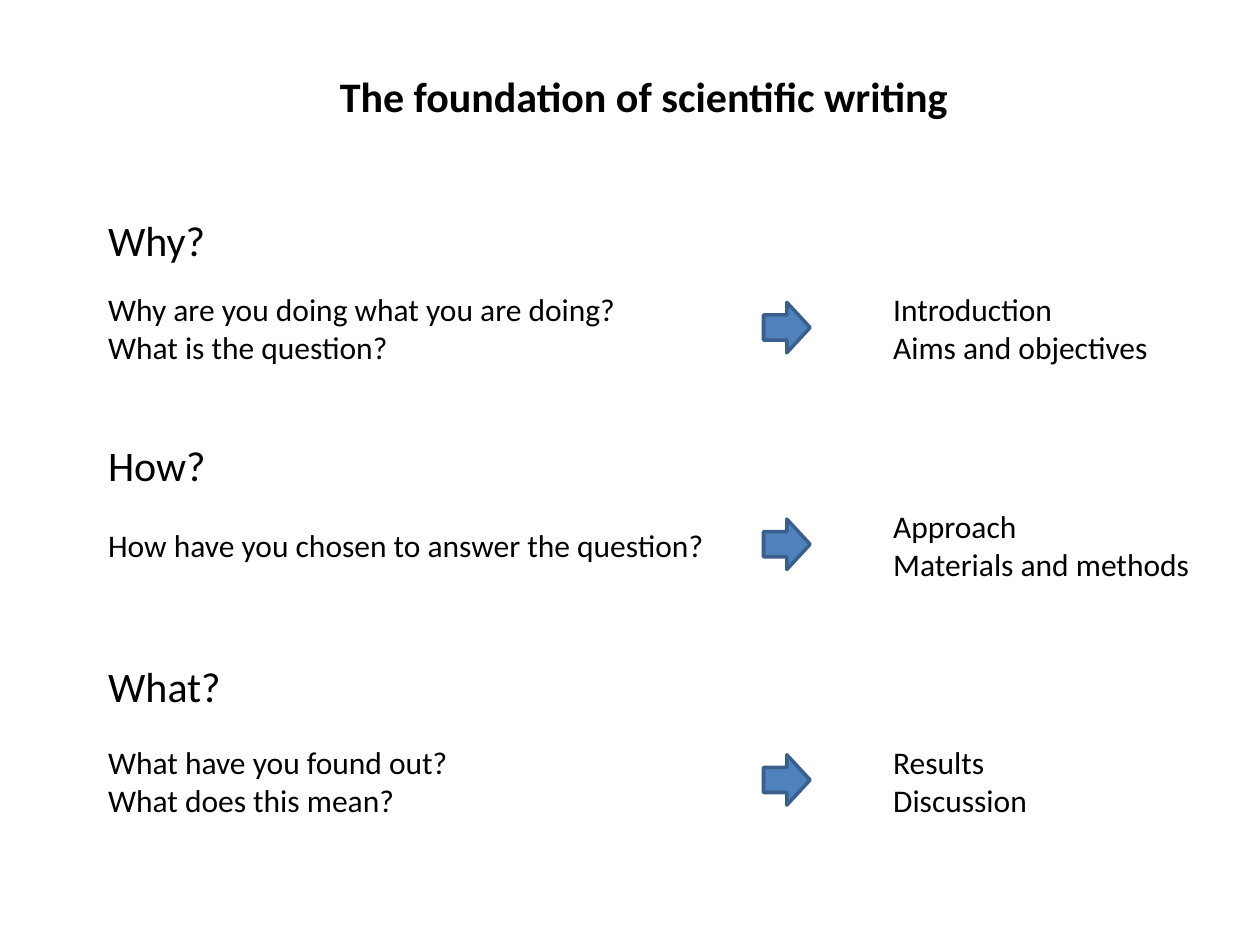
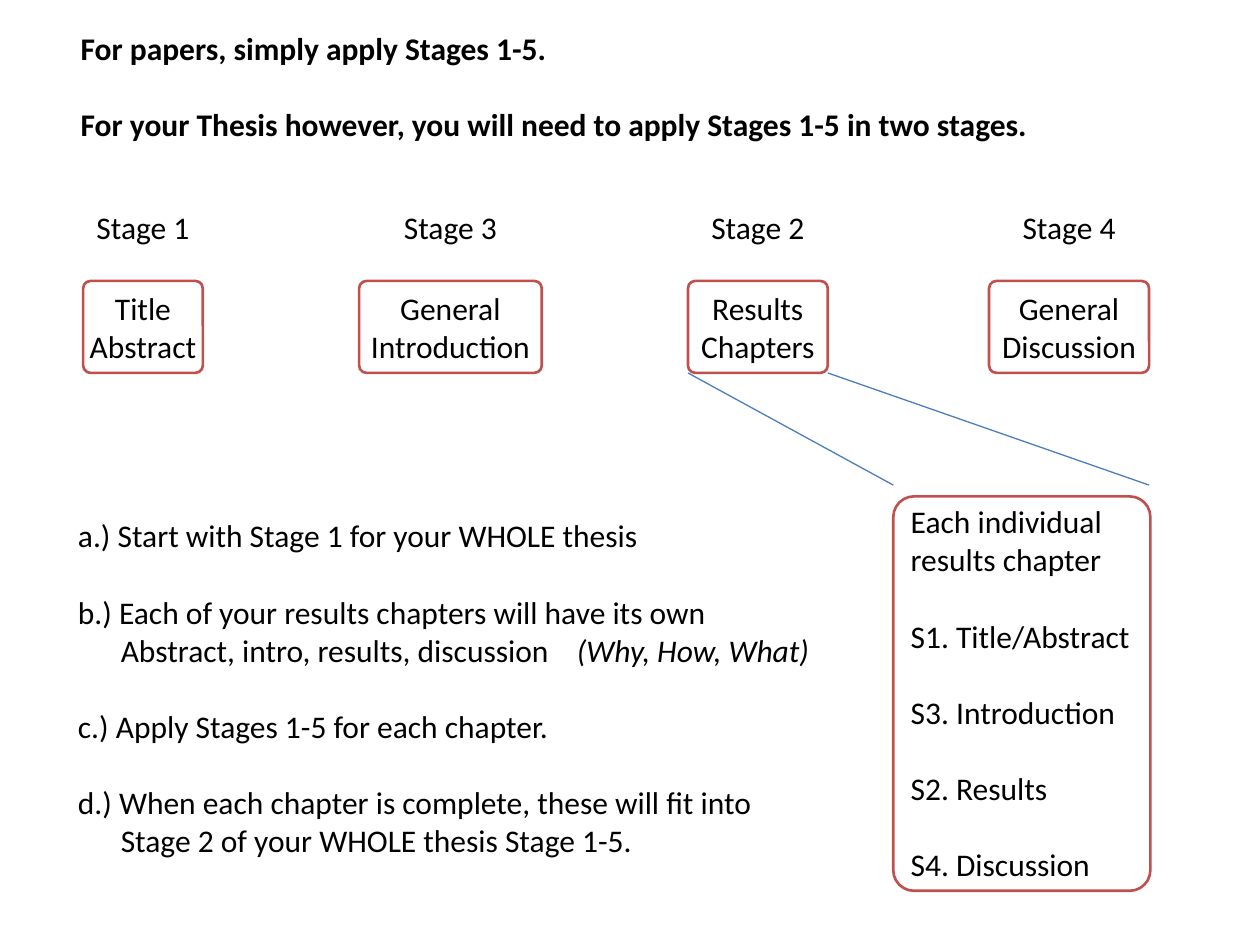
from lxml import etree
from pptx import Presentation
from pptx import util as u
from pptx.dml.color import RGBColor
from pptx.enum import shapes, text
from pptx.oxml import ns

INK, RED, BLUE, BLUE_EDGE, BLUE_LINE = "000000", "C0504D", "4F81BD", "3A5F8C", "4B7EBC"
LEFT, CENTER = text.PP_ALIGN.LEFT, text.PP_ALIGN.CENTER
TOP, MIDDLE = text.MSO_ANCHOR.TOP, text.MSO_ANCHOR.MIDDLE
BODY, HEADING, LINE_GAP = 18, 24, 22
TITLE_ONLY = 5


def color(value):
    return RGBColor.from_string(value)


class Slides:
    """Holds the shared style and the slide being drawn."""

    font = "Calibri"

    def __init__(self):
        self.deck = Presentation()
        self.deck.slide_width, self.deck.slide_height = u.Inches(10), u.Inches(7.5)
        self.page = None

    def add_page(self, lines, place, size, align=LEFT):
        self.page = self.deck.slides.add_slide(self.deck.slide_layouts[TITLE_ONLY])
        title = self.page.shapes.title
        title.left, title.top, title.width, title.height = map(u.Inches, place)
        self.fill_text(title.text_frame, lines, size, align, gap=LINE_GAP, bold=True)

    def fill_text(self, frame, lines, size=BODY, align=LEFT, anchor=TOP,
                  gap=0, bold=False, insets=(0.1, 0.05), tabs=()):
        frame.word_wrap = True
        frame.auto_size = text.MSO_AUTO_SIZE.NONE
        frame.vertical_anchor = anchor
        frame.margin_left = frame.margin_right = u.Inches(insets[0])
        frame.margin_top = frame.margin_bottom = u.Inches(insets[1])
        for index, line in enumerate(lines):
            para = frame.add_paragraph() if index else frame.paragraphs[0]
            para.text = line
            para.alignment = align
            para.space_before = u.Pt(gap if index else 0)
            self.set_tabs(para, tabs)
            para.font.name, para.font.size, para.font.bold = self.font, u.Pt(size), bold
            para.font.color.rgb = color(INK)
        return frame

    def set_tabs(self, para, stops):
        if stops:
            tab_list = etree.SubElement(para._p.get_or_add_pPr(), ns.qn("a:tabLst"))
            for stop in stops:
                etree.SubElement(tab_list, ns.qn("a:tab"), pos=str(u.Inches(stop)), algn="l")

    def label(self, lines, place, **style):
        box = self.page.shapes.add_textbox(*map(u.Inches, place))
        return self.fill_text(box.text_frame, lines, **style)

    def shape(self, kind, place, edge, width, fill=None):
        item = self.page.shapes.add_shape(kind, *map(u.Inches, place))
        item.shadow.inherit = False
        if fill:
            item.fill.solid()
            item.fill.fore_color.rgb = color(fill)
        else:
            item.fill.background()
        item.line.color.rgb, item.line.width = color(edge), u.Pt(width)
        return item

    def frame(self, lines, place, **style):
        box = self.shape(shapes.MSO_SHAPE.ROUNDED_RECTANGLE, place, RED, 1.5)
        box.adjustments[0] = 0.08
        self.fill_text(box.text_frame, lines, **style)

    def arrow(self, place):
        self.shape(shapes.MSO_SHAPE.RIGHT_ARROW, place, BLUE_EDGE, 2, BLUE)

    def line(self, start, end):
        connector = self.page.shapes.add_connector(
            shapes.MSO_CONNECTOR.STRAIGHT, *map(u.Inches, start + end))
        connector.line.color.rgb, connector.line.width = color(BLUE_LINE), u.Pt(0.75)
        etree.SubElement(connector._element.spPr, ns.qn("a:effectLst"))


def draw_foundation(slides):
    slides.add_page(["The foundation of scientific writing"], (2.57, 0.51, 5.08, 0.51),
                    HEADING, CENTER)
    rows = [
        (1.65, 2.25, "Why?", ["Why are you doing what you are doing?", "What is the question?"],
         ["Introduction", "Aims and objectives"]),
        (3.44, 3.97, "How?", ["How have you chosen to answer the question?"],
         ["Approach", "Materials and methods"]),
        (5.19, 5.84, "What?", ["What have you found out?", "What does this mean?"],
         ["Results", "Discussion"]),
    ]
    for heading_top, body_top, heading, questions, sections in rows:
        slides.label([heading], (0.76, heading_top, 1.3, 0.51), size=HEADING)
        slides.label(questions, (0.76, body_top, 5.2, 0.71), anchor=MIDDLE)
        slides.arrow((6.06, body_top + 0.15, 0.37, 0.4))
        slides.label(sections, (6.99, body_top, 2.75, 0.71), anchor=MIDDLE)


def draw_thesis_stages(slides):
    slides.add_page(["For papers, simply apply Stages 1-5.",
                     "For your Thesis however, you will need to apply Stages 1-5 in two stages."],
                    (0.54, 0.18, 7.86, 1.01), BODY)
    box_top, box_height, label_width = 2.23, 0.73, 1.2
    stages = [
        ("Stage 1", ["Title", "Abstract"], 0.66, 0.95),
        ("Stage 3", ["General", "Introduction"], 2.85, 1.45),
        ("Stage 2", ["Results", "Chapters"], 5.46, 1.11),
        ("Stage 4", ["General", "Discussion"], 7.85, 1.27),
    ]
    for stage, parts, left, width in stages:
        label_left = left + (width - label_width) / 2
        slides.label([stage], (label_left, 1.6, label_width, 0.4), align=CENTER)
        slides.frame(parts, (left, box_top, width, box_height),
                     align=CENTER, anchor=MIDDLE, insets=(0, 0))

    box_bottom = box_top + box_height
    slides.line((5.46, box_bottom), (7.09, 3.85))
    slides.line((6.57, box_bottom), (9.12, 3.85))
    slides.frame(["Each individual\vresults chapter", "S1. Title/Abstract", "S3. Introduction",
                  "S2. Results", "S4. Discussion"],
                 (7.09, 3.94, 2.04, 3.13), gap=LINE_GAP, insets=(0.09, 0))

    steps = slides.label(
        ["a.) Start with Stage 1 for your WHOLE thesis",
         "b.) Each of your results chapters will have its own\v"
         "\tAbstract, intro, results, discussion\t",
         "c.) Apply Stages 1-5 for each chapter.",
         "d.) When each chapter is complete, these will fit into\v"
         "\tStage 2 of your WHOLE thesis Stage 1-5."],
        (0.52, 4.05, 6.19, 2.83), gap=LINE_GAP, tabs=(0.34, 3.96))
    span = steps.paragraphs[1].add_run()
    span.text = "(Why, How, What)"
    span.font.italic = True


def main():
    slides = Slides()
    draw_foundation(slides)
    draw_thesis_stages(slides)
    slides.deck.save("out.pptx")


if __name__ == "__main__":
    main()
